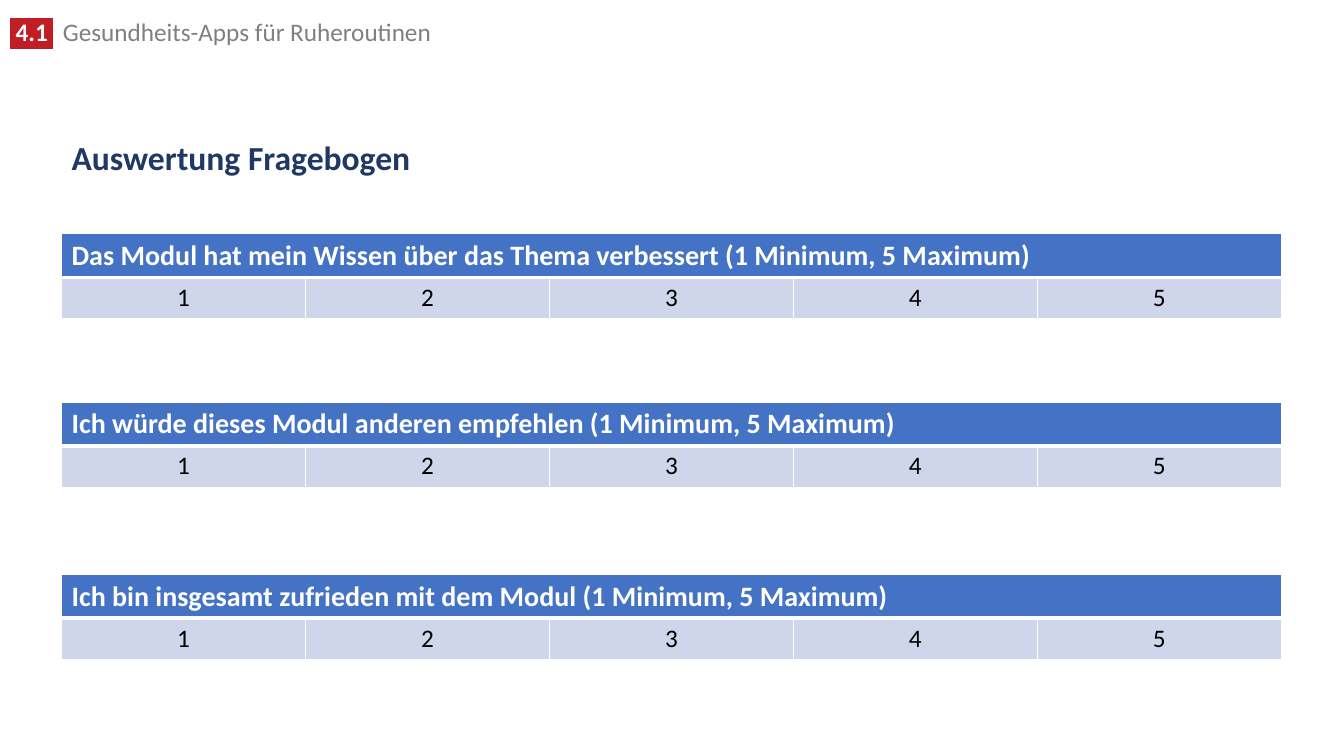
import pptx
import pptx.dml.color
import pptx.enum.text
import pptx.oxml
import pptx.oxml.ns
import pptx.util
from dataclasses import dataclass

EMU_PER_PX = 9144  # 100 px to the inch


@dataclass(frozen=True)
class Theme:
    white: str = "FFFFFF"
    black: str = "000000"
    red: str = "C01E24"
    gray: str = "808080"
    navy: str = "203864"
    header_fill: str = "4472C4"
    scale_fill: str = "CFD5EA"
    font: str = "Calibri"
    gap_font: str = "Arial"
    small: int = 18
    medium: int = 20
    large: int = 24


def px(value):
    return pptx.util.Emu(value * EMU_PER_PX)


def color(value):
    return pptx.dml.color.RGBColor.from_string(value)


def element(xml):
    return pptx.oxml.parse_xml(xml.replace(">", " " + pptx.oxml.ns.nsdecls("a") + ">", 1))


class SlideBuilder:
    def __init__(self, slide, theme):
        self.slide = slide
        self.theme = theme

    def run(self, paragraph, text, size, fill, bold=False, font=None, highlight=None):
        run = paragraph.add_run()
        run.text = text
        run.font.name = font or self.theme.font
        run.font.size = pptx.util.Pt(size)
        run.font.bold = bold
        run.font.color.rgb = color(fill)
        if highlight:
            mark = element(f'<a:highlight><a:srgbClr val="{highlight}"/></a:highlight>')
            run.font.fill  # the highlight follows the text fill
            properties = run.font.color.rgb and run._r.get_or_add_rPr()
            properties.find(pptx.oxml.ns.qn("a:solidFill")).addnext(mark)

    def chapter(self, number, name, left, top, width, height):
        theme = self.theme
        shape = self.slide.shapes.add_textbox(px(left), px(top), px(width), px(height))
        frame = shape.text_frame
        frame.word_wrap = True
        frame.auto_size = pptx.enum.text.MSO_AUTO_SIZE.SHAPE_TO_FIT_TEXT
        paragraph = frame.paragraphs[0]
        paragraph.line_spacing = 0.8
        self.run(paragraph, f" {number} ", theme.small, theme.white, True, highlight=theme.red)
        self.run(paragraph, " ", theme.large, theme.black, font=theme.gap_font)
        self.run(paragraph, name, theme.small, theme.gray)

    def title(self, text, left, top, width, height):
        shape = self.slide.shapes.title
        shape.left, shape.top = px(left), px(top)
        shape.width, shape.height = px(width), px(height)
        frame = shape.text_frame
        frame.word_wrap = True
        frame.vertical_anchor = pptx.enum.text.MSO_ANCHOR.MIDDLE
        paragraph = frame.paragraphs[0]
        paragraph.alignment = pptx.enum.text.PP_ALIGN.LEFT
        paragraph.line_spacing = 0.9
        self.run(paragraph, text, self.theme.large, self.theme.navy, True)

    def style_cell(self, cell, fill, top_border, bottom_border):
        cell.fill.solid()
        cell.fill.fore_color.rgb = color(fill)
        properties = cell._tc.get_or_add_tcPr()
        borders = {"lnL": 1, "lnR": 1, "lnT": top_border, "lnB": bottom_border}
        for position, (side, points) in enumerate(borders.items()):
            properties.insert(position, element(
                f'<a:{side} w="{pptx.util.Pt(points)}"><a:solidFill>'
                f'<a:srgbClr val="{self.theme.white}"/></a:solidFill></a:{side}>'))

    def rating_table(self, question, ratings, left, top, column_width, row_height):
        theme = self.theme
        count = len(ratings)
        table = self.slide.shapes.add_table(
            2, count, px(left), px(top), px(column_width * count), px(row_height * 2)).table
        for column, rating in enumerate(ratings):
            self.style_cell(table.cell(0, column), theme.header_fill, 1, 3)
            cell = table.cell(1, column)
            self.style_cell(cell, theme.scale_fill, 3, 1)
            paragraph = cell.text_frame.paragraphs[0]
            paragraph.alignment = pptx.enum.text.PP_ALIGN.CENTER
            self.run(paragraph, str(rating), theme.small, theme.black)
        header = table.cell(0, 0)
        header.merge(table.cell(0, count - 1))
        self.run(header.text_frame.paragraphs[0], question, theme.medium, theme.white, True)


def main():
    presentation = pptx.Presentation()
    presentation.slide_width, presentation.slide_height = px(1333), px(750)
    slide = presentation.slides.add_slide(presentation.slide_layouts[5])
    builder = SlideBuilder(slide, Theme())

    # Chapter line and title
    builder.chapter("4.1", "Gesundheits-Apps für Ruheroutinen", 0, 11, 952, 42)
    builder.title("Auswertung Fragebogen", 61, 118, 1210, 80)

    # One rating table per question
    questions = [
        (232, "Das Modul hat mein Wissen über das Thema verbessert"),
        (399, "Ich würde dieses Modul anderen empfehlen"),
        (570, "Ich bin insgesamt zufrieden mit dem Modul"),
    ]
    for top, question in questions:
        builder.rating_table(
            f"{question} (1 Minimum, 5 Maximum)", range(1, 6), 61, top, 242, 41)

    presentation.save("out.pptx")


if __name__ == "__main__":
    main()
